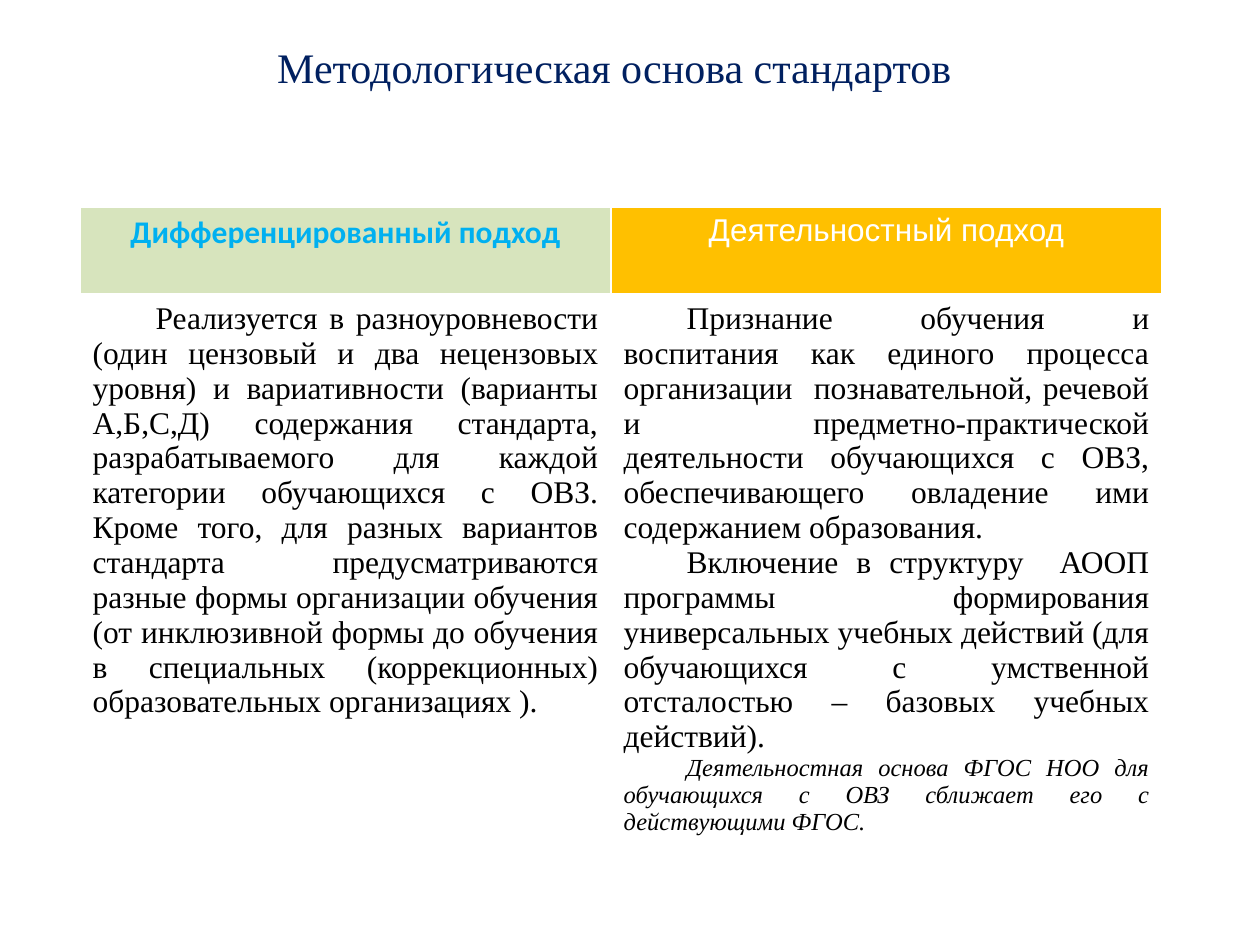
import pptx
import pptx.util
import pptx.dml.color
import pptx.enum.text
import pptx.oxml.ns
from lxml import etree

ALIGN = pptx.enum.text.PP_ALIGN

# Content
TITLE = "Методологическая основа стандартов"
COLUMNS = [
    {
        "width": 531,
        "head": ("Дифференцированный подход", "head_left"),
        "fill": "green",
        "body": [
            ("Реализуется в разноуровневости (один цензовый и два нецензовых уровня) "
             "и вариативности (варианты А,Б,С,Д) содержания стандарта, разрабатываемого "
             "для каждой категории обучающихся с ОВЗ. Кроме того, для разных вариантов "
             "стандарта предусматриваются разные формы организации обучения (от "
             "инклюзивной формы до обучения в специальных (коррекционных) "
             "образовательных организациях ).", "body"),
        ],
    },
    {
        "width": 551,
        "head": ("Деятельностный подход", "head_right"),
        "fill": "orange",
        "body": [
            ("Признание обучения и воспитания как единого процесса организации  "
             "познавательной, речевой и предметно-практической деятельности обучающихся "
             "с ОВЗ, обеспечивающего овладение ими содержанием образования.", "body"),
            ("Включение в структуру  АООП программы формирования универсальных учебных "
             "действий (для обучающихся с умственной отсталостью – базовых учебных "
             "действий).", "body"),
            ("Деятельностная основа ФГОС НОО для обучающихся с ОВЗ сближает его с "
             "действующими ФГОС.", "note"),
        ],
    },
]

# Theme and layout, lengths in px
SERIF = "Times New Roman"
THEME = {
    "colors": {"navy": "002060", "sky": "00B0F0", "white": "FFFFFF",
               "black": "000000", "green": "D7E4BD", "orange": "FFC000"},
    "text": {
        "title": {"name": SERIF, "size": 24, "color": "navy", "bold": False},
        "head_left": {"name": "Calibri", "size": 18, "color": "sky", "bold": True},
        "head_right": {"name": "Arial", "size": 18, "color": "white", "bold": False},
        "body": {"name": SERIF, "size": 18, "color": "black", "bold": False},
        "note": {"name": SERIF, "size": 14, "color": "black", "bold": False, "italic": True},
    },
}
SLIDE = (1260, 945)
TITLE_BOX = (196, 42, 837, 48)
TABLE_LEFT, TABLE_TOP = 80, 207
ROWS = (88, 592)
INDENT = 63
BORDERS = {"lnL": 1, "lnR": 1, "lnT": 1, "lnB": 1}


def px(n):
    return pptx.util.Emu(round(n * 914400 / 126))


def rgb(key):
    return pptx.dml.color.RGBColor.from_string(THEME["colors"][key])


def write(tf, paragraphs, align, indent=0):
    for i, (text, style) in enumerate(paragraphs):
        p = tf.paragraphs[0] if i == 0 else tf.add_paragraph()
        p.alignment = align
        if indent:
            pPr = p._p.get_or_add_pPr()
            pPr.set("marL", "0")
            pPr.set("indent", str(px(indent)))
        r = p.add_run()
        r.text = text
        for key, value in THEME["text"][style].items():
            if key == "color":
                r.font.color.rgb = rgb(value)
            else:
                setattr(r.font, key, pptx.util.Pt(value) if key == "size" else value)


def set_borders(cell, widths):
    tcPr = cell._tc.get_or_add_tcPr()
    for i, (tag, width) in enumerate(widths.items()):
        ln = etree.Element(pptx.oxml.ns.qn("a:" + tag), w=str(pptx.util.Pt(width)))
        fill = etree.SubElement(ln, pptx.oxml.ns.qn("a:solidFill"))
        etree.SubElement(fill, pptx.oxml.ns.qn("a:srgbClr"), val=THEME["colors"]["white"])
        tcPr.insert(i, ln)


def add_title(s):
    tf = s.shapes.add_textbox(*map(px, TITLE_BOX)).text_frame
    tf.word_wrap = True
    for side in ("left", "top", "right", "bottom"):
        setattr(tf, "margin_" + side, 0)
    write(tf, [(TITLE, "title")], ALIGN.CENTER)


def add_approaches(s):
    widths = [c["width"] for c in COLUMNS]
    table = s.shapes.add_table(len(ROWS), len(COLUMNS), px(TABLE_LEFT), px(TABLE_TOP),
                               px(sum(widths)), px(sum(ROWS))).table
    table.horz_banding = False
    for row, height in zip(table.rows, ROWS):
        row.height = px(height)
    for i, column in enumerate(COLUMNS):
        table.columns[i].width = px(column["width"])
        head, body = table.cell(0, i), table.cell(1, i)
        head.fill.solid()
        head.fill.fore_color.rgb = rgb(column["fill"])
        body.fill.background()
        set_borders(head, {**BORDERS, "lnB": 3})
        set_borders(body, {**BORDERS, "lnT": 3})
        write(head.text_frame, [column["head"]], ALIGN.CENTER)
        write(body.text_frame, column["body"], ALIGN.JUSTIFY, INDENT)


def main():
    prs = pptx.Presentation()
    prs.slide_width, prs.slide_height = map(px, SLIDE)
    s = prs.slides.add_slide(prs.slide_layouts[6])
    add_title(s)
    add_approaches(s)
    prs.save("out.pptx")


if __name__ == "__main__":
    main()
